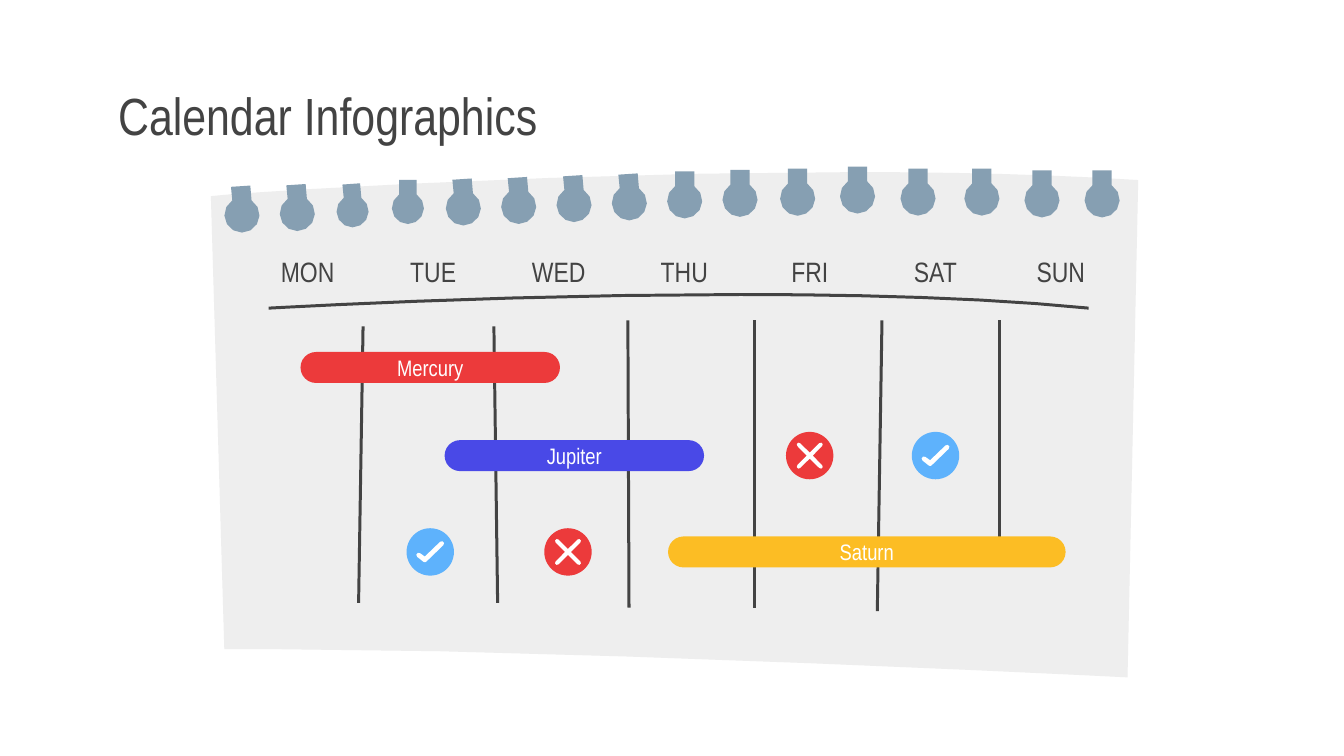
from dataclasses import dataclass
from math import asin, cos, degrees, radians, sin

from pptx import Presentation
from pptx.dml.color import RGBColor
from pptx.enum.shapes import MSO_SHAPE
from pptx.enum.text import MSO_ANCHOR, PP_ALIGN
from pptx.util import Pt

Point = tuple[float, float]

FONT = "Arial Narrow"
COLORS = {
    "paper": "EEEEEE",
    "ink": "434343",
    "ring": "869FB2",
    "red": "EC3A3B",
    "indigo": "4949E7",
    "yellow": "FCBD24",
    "blue": "5EB2FC",
    "white": "FFFFFF",
}
LINE_WIDTH = 1.6
BADGE_SIZE = 25.4
CURVE_STEPS = 6
CAP_STEPS = 3
RING_STEPS = 10


@dataclass
class Divider:
    top: Point
    bottom: Point


@dataclass
class Ring:
    center_x: float
    top: float
    radius: float = 9.4
    lean: float = 0


@dataclass
class Bar:
    label: str
    left: float
    top: float
    width: float
    color: str


@dataclass
class Badge:
    center: Point
    done: bool


DAYS = ("MON", "TUE", "WED", "THU", "FRI", "SAT", "SUN")
DIVIDERS = (
    Divider((194.5, 174.8), (192.1, 323)),
    Divider((264.6, 174.8), (266.6, 323)),
    Divider((336.4, 171.6), (337, 325.5)),
    Divider((404.2, 171.6), (404.2, 325.5)),
    Divider((472.5, 171.6), (470, 327.4)),
    Divider((535.5, 171.6), (535.5, 298)),
)
LEFT_RING_TOPS = (99.4, 98.6, 98.2, 96.4, 95.6, 94.8, 93.8, 92.9, 91.8, 91)
SMALL_RINGS = (2, 3)
UPRIGHT_RINGS = (3, 8, 9)
RIGHT_RINGS = (
    Ring(427.3, 90.4),
    Ring(459.4, 89.2),
    Ring(491.8, 90.3),
    Ring(526, 90.3),
    Ring(558.2, 91.3),
    Ring(590.4, 91.3),
)
BARS = (
    Bar("Mercury", 161, 188.6, 139, "red"),
    Bar("Jupiter", 238.2, 235.8, 139, "indigo"),
    Bar("Saturn", 357.9, 287.4, 213, "yellow"),
)
BADGES = (
    Badge((304.3, 295.7), False),
    Badge((433.8, 244.1), False),
    Badge((501.2, 244.1), True),
    Badge((230.5, 295.7), True),
)


def curve(start: Point, first: Point, second: Point, end: Point) -> list[Point]:
    """Sample a cubic curve given by its ends and two control points."""
    points = []
    for step in range(CURVE_STEPS + 1):
        t = step / CURVE_STEPS
        weights = ((1 - t) ** 3, 3 * t * (1 - t) ** 2, 3 * t * t * (1 - t), t**3)
        corners = (start, first, second, end)
        points.append(tuple(sum(w * c[axis] for w, c in zip(weights, corners))
                            for axis in (0, 1)))
    return points


def polar(center: Point, radius: float, angle: float) -> Point:
    """Return the point at an angle in degrees, clockwise from the right."""
    return (center[0] + radius * cos(radians(angle)),
            center[1] + radius * sin(radians(angle)))


def arc(center: Point, radius: float, start: float, end: float,
        steps: int = CAP_STEPS) -> list[Point]:
    return [polar(center, radius, start + (end - start) * i / steps)
            for i in range(steps + 1)]


def paint(shape, color: str) -> None:
    shape.shadow.inherit = False
    shape.fill.solid()
    shape.fill.fore_color.rgb = RGBColor.from_string(COLORS[color])
    shape.line.fill.background()


def draw_outline(slide, points: list[Point], color: str) -> None:
    corners = [(Pt(x), Pt(y)) for x, y in points]
    builder = slide.shapes.build_freeform(*corners[0], scale=1.0)
    builder.add_line_segments(corners[1:], close=True)
    paint(builder.convert_to_shape(), color)


def write(shape, text: str, size: float, color: str, alignment=PP_ALIGN.CENTER) -> None:
    frame = shape.text_frame
    frame.text = text
    frame.word_wrap = True
    frame.vertical_anchor = MSO_ANCHOR.MIDDLE
    frame.margin_left = frame.margin_right = Pt(7.2)
    frame.margin_top = frame.margin_bottom = Pt(7.2)
    paragraph = frame.paragraphs[0]
    paragraph.alignment = alignment
    font = paragraph.runs[0].font
    font.name = FONT
    font.size = Pt(size)
    font.color.rgb = RGBColor.from_string(COLORS[color])


def draw_paper(slide) -> None:
    top_left = curve((459.4, 92.2), (290.2, 92.2), (110.2, 104.4), (113, 105.1))
    bottom = curve((147.6, 347.8), (303.8, 347.8), (604.1, 362.9), (604.1, 362.9))
    top_right = curve((609.8, 96.5), (564.5, 93.6), (512.6, 92.2), (459.4, 92.2))
    draw_outline(slide, top_left + [(120.2, 347.8)] + bottom + top_right[:-1], "paper")


def draw_header_rule(slide) -> None:
    upper = curve((144, 164.3), (146.2, 164.3), (267.1, 157), (396.7, 157))
    upper += curve((396.7, 157), (461.5, 157), (528.5, 158.8), (583.2, 164.3))[1:]
    lower = [(x, y + LINE_WIDTH) for x, y in reversed(upper)]
    draw_outline(slide, upper + lower, "ink")


def draw_divider(slide, divider: Divider) -> None:
    half = LINE_WIDTH / 2
    (top_x, top_y), (bottom_x, bottom_y) = divider.top, divider.bottom
    draw_outline(slide, [(top_x - half, top_y), (top_x + half, top_y),
                         (bottom_x + half, bottom_y), (bottom_x - half, bottom_y)], "ink")


def draw_ring(slide, ring: Ring) -> None:
    """Draw a punched hole: a disc with a tab that leans to the left."""
    half = 0.55 * ring.radius
    opening = degrees(asin(0.55))
    center = (ring.center_x, ring.top + 6.4 + ring.radius)
    tab_x = ring.center_x - ring.lean
    tab = [(tab_x - half, ring.top + ring.lean), (tab_x + half, ring.top)]
    disc = arc(center, ring.radius, opening - 90, 270 - opening, RING_STEPS)
    draw_outline(slide, tab + disc, "ring")


def cross_points(center: Point) -> list[Point]:
    points = []
    for angle in range(45, 405, 90):
        points += arc(polar(center, 8.3, angle), 1.1, angle - 90, angle + 90)
        points.append(polar(center, 1.56, angle + 45))
    return points


def check_points(center: Point) -> list[Point]:
    x, y = center
    return (arc((x + 6.2, y - 4.5), 1.25, -134, 46)
            + arc((x - 2.9, y + 4.3), 1.25, 46, 128)
            + arc((x - 6.2, y + 1.7), 1.25, 128, 308)
            + [(x - 2.9, y + 2.5)])


def draw_badge(slide, badge: Badge) -> None:
    x, y = badge.center
    disc = slide.shapes.add_shape(MSO_SHAPE.OVAL, Pt(x - BADGE_SIZE / 2),
                                  Pt(y - BADGE_SIZE / 2), Pt(BADGE_SIZE), Pt(BADGE_SIZE))
    paint(disc, "blue" if badge.done else "red")
    mark = check_points if badge.done else cross_points
    draw_outline(slide, mark(badge.center), "white")


def draw_bar(slide, bar: Bar) -> None:
    shape = slide.shapes.add_shape(MSO_SHAPE.ROUNDED_RECTANGLE, Pt(bar.left),
                                   Pt(bar.top), Pt(bar.width), Pt(16.6))
    shape.adjustments[0] = 0.5
    paint(shape, bar.color)
    write(shape, bar.label, 12, "white")


def main() -> None:
    presentation = Presentation()
    presentation.slide_width, presentation.slide_height = Pt(720), Pt(405)
    slide = presentation.slides.add_slide(presentation.slide_layouts[6])

    draw_paper(slide)
    draw_header_rule(slide)
    for divider in DIVIDERS:
        draw_divider(slide, divider)
    left_rings = [Ring(129.6 + 29.65 * i, top, 8.6 if i in SMALL_RINGS else 9.4,
                       0 if i in UPRIGHT_RINGS else 0.7)
                  for i, top in enumerate(LEFT_RING_TOPS)]
    for ring in (*left_rings, *RIGHT_RINGS):
        draw_ring(slide, ring)

    title = slide.shapes.add_textbox(Pt(56.2), Pt(42.5), Pt(608.4), Pt(38.2))
    write(title, "Calendar Infographics", 28, "ink", PP_ALIGN.LEFT)
    for i, day in enumerate(DAYS):
        box = slide.shapes.add_textbox(Pt(134.6 + 67.25 * i), Pt(129.6), Pt(60.5), Pt(31))
        write(box, day, 15, "ink")
    for badge in BADGES:
        draw_badge(slide, badge)
    for bar in BARS:
        draw_bar(slide, bar)

    presentation.save("out.pptx")


if __name__ == "__main__":
    main()
